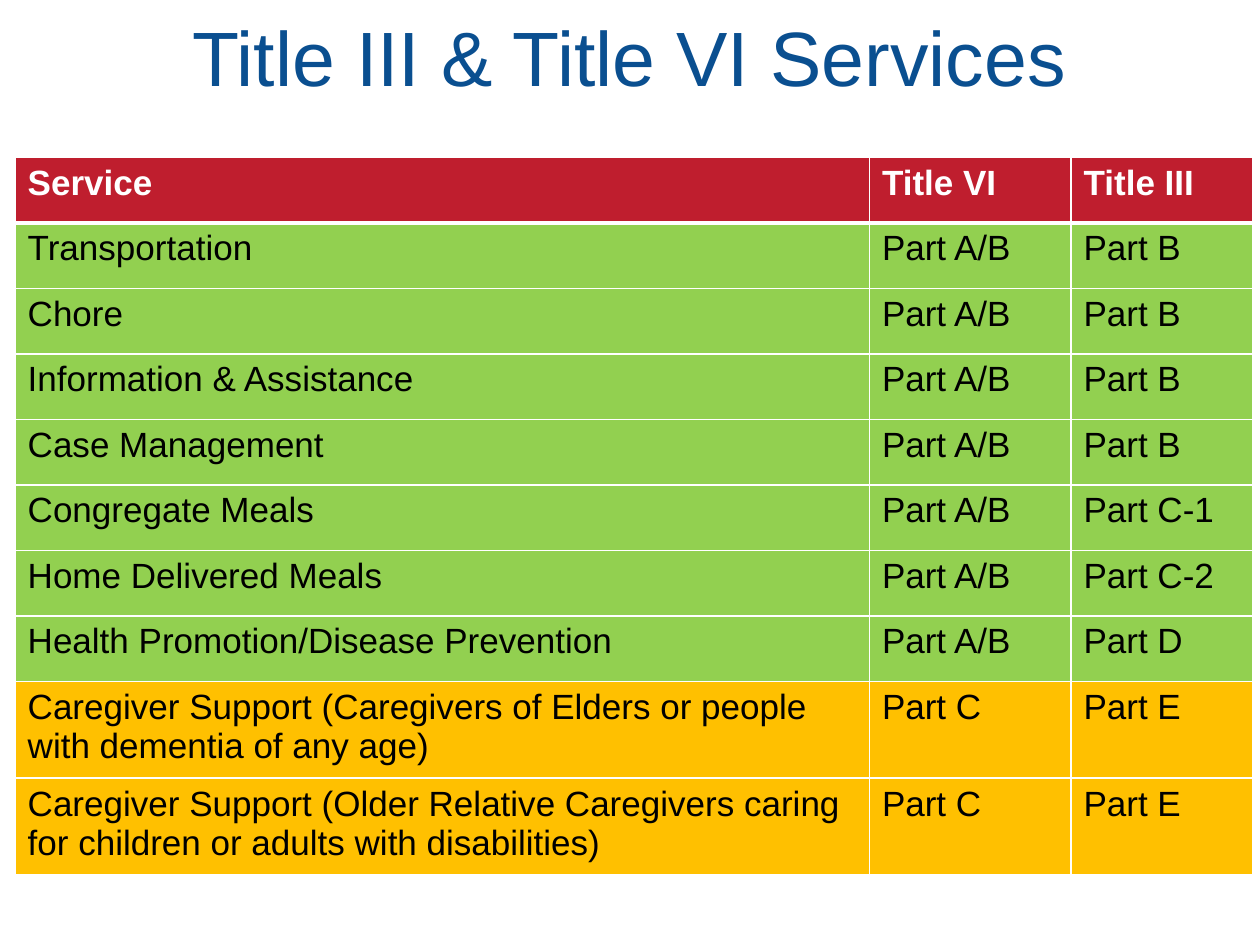
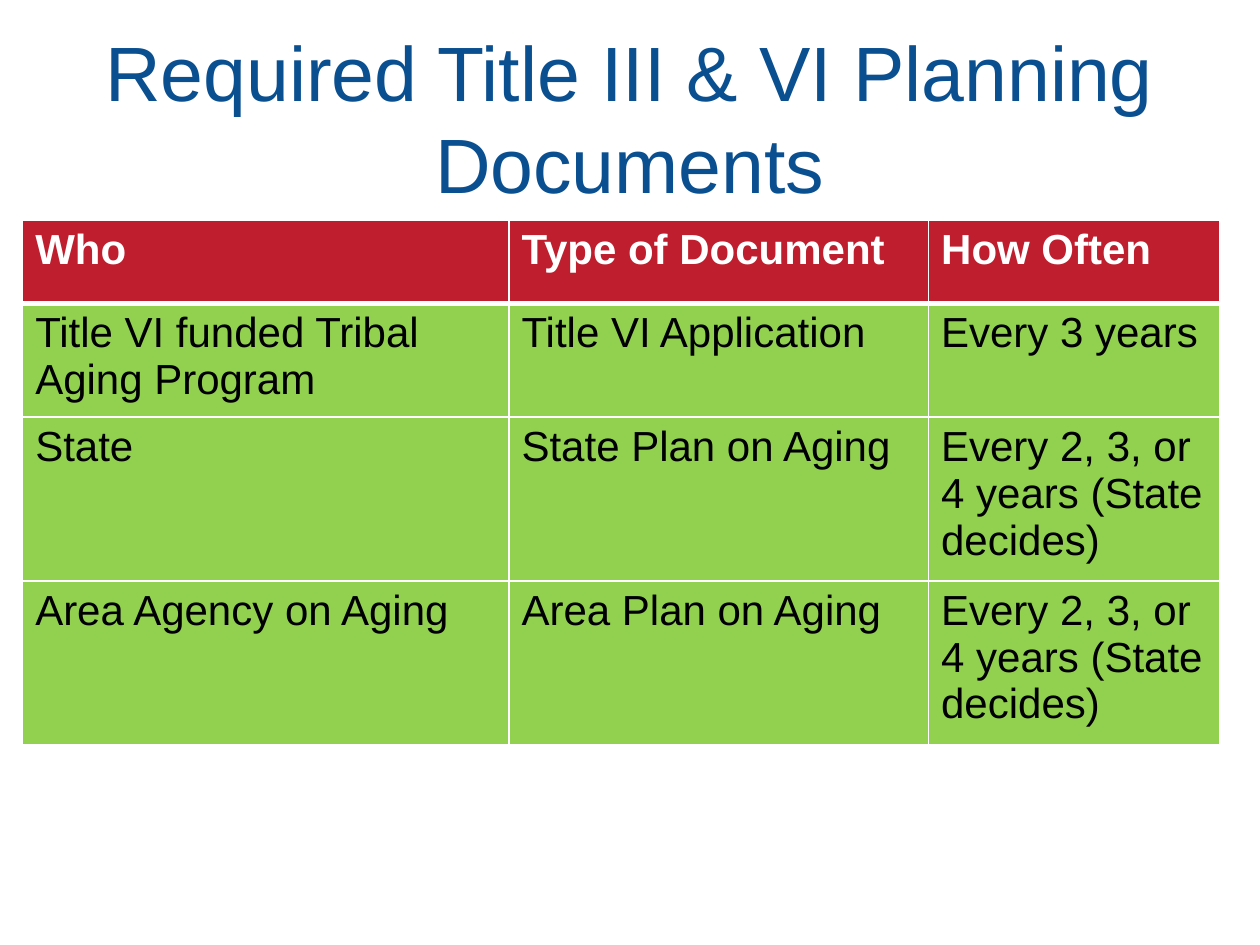
from lxml.etree import SubElement
from pptx import Presentation
from pptx.dml.color import RGBColor
from pptx.enum.text import MSO_ANCHOR, PP_ALIGN
from pptx.oxml.ns import qn
from pptx.util import Inches, Pt

HUES = {"title": "0A4F90", "head": "BF1E2E", "green": "92D050",
        "gold": "FFC000", "white": "FFFFFF", "black": "000000"}
FACE = "Arial"


def style(para, size, hue, bold=False):
    para.font.name = FACE
    para.font.size = Pt(size)
    para.font.bold = bold
    para.font.color.rgb = RGBColor.from_string(HUES[hue])


def add_title(slide, text, box):
    frame = slide.shapes.add_textbox(*map(Inches, box)).text_frame
    frame.word_wrap = True
    frame.vertical_anchor = MSO_ANCHOR.MIDDLE
    para = frame.paragraphs[0]
    para.text = text
    para.alignment = PP_ALIGN.CENTER
    style(para, 44, "title")


def add_edges(cell, row):
    props = cell._tc.get_or_add_tcPr()
    widths = {"L": 1, "R": 1, "T": 3 if row == 1 else 1, "B": 3 if row == 0 else 1}
    for place, (side, width) in enumerate(widths.items()):
        line = SubElement(props, qn(f"a:ln{side}"), w=str(Pt(width)))
        fill = SubElement(line, qn("a:solidFill"))
        SubElement(fill, qn("a:srgbClr"), val=HUES["white"])
        props.insert(place, line)


def add_grid(slide, spot, cols, tall, rows, size, gold=()):
    box = (*spot, sum(cols), sum(tall))
    table = slide.shapes.add_table(len(rows), len(cols), *map(Inches, box)).table
    for col, width in zip(table.columns, cols):
        col.width = Inches(width)
    for r, (texts, height) in enumerate(zip(rows, tall)):
        table.rows[r].height = Inches(height)
        hue = "head" if r == 0 else "gold" if r in gold else "green"
        for c, text in enumerate(texts):
            cell = table.cell(r, c)
            cell.fill.solid()
            cell.fill.fore_color.rgb = RGBColor.from_string(HUES[hue])
            add_edges(cell, r)
            para = cell.text_frame.paragraphs[0]
            para.text = text
            style(para, size, "black" if r else "white", r == 0)


def add_page(deck, title, box, **grid):
    slide = deck.slides.add_slide(deck.slide_layouts[6])
    add_title(slide, title, box)
    add_grid(slide, **grid)


def main():
    deck = Presentation()
    deck.slide_width, deck.slide_height = Inches(10), Inches(7.5)
    parts = [
        ("Transportation", "Part B"),
        ("Chore", "Part B"),
        ("Information & Assistance", "Part B"),
        ("Case Management", "Part B"),
        ("Congregate Meals", "Part C-1"),
        ("Home Delivered Meals", "Part C-2"),
        ("Health Promotion/Disease Prevention", "Part D"),
    ]
    care = [
        "Caregivers of Elders or people with dementia of any age",
        "Older Relative Caregivers caring for children or adults with disabilities",
    ]
    add_page(
        deck, "Title III & Title VI Services", (0.5, 0, 9, 0.88),
        spot=(0.12, 1.25), cols=(6.78, 1.6, 1.44),
        tall=[0.52] * 8 + [0.73] * 2, size=20, gold=(8, 9),
        rows=[("Service", "Title VI", "Title III")]
        + [(name, "Part A/B", part) for name, part in parts]
        + [(f"Caregiver Support ({who})", "Part C", "Part E") for who in care],
    )
    term = "Every 2, 3, or 4 years (State decides)"
    add_page(
        deck, "Required Title III & VI Planning Documents", (0.5, 0.3, 9, 1.25),
        spot=(0.18, 1.75), cols=(3.86, 3.33, 2.31),
        tall=(0.66, 0.84, 1.21, 1.21), size=24,
        rows=[
            ("Who", "Type of Document", "How Often"),
            ("Title VI funded Tribal Aging Program", "Title VI Application",
             "Every 3 years"),
            ("State", "State Plan on Aging", term),
            ("Area Agency on Aging", "Area Plan on Aging", term),
        ],
    )
    deck.save("out.pptx")


if __name__ == "__main__":
    main()
